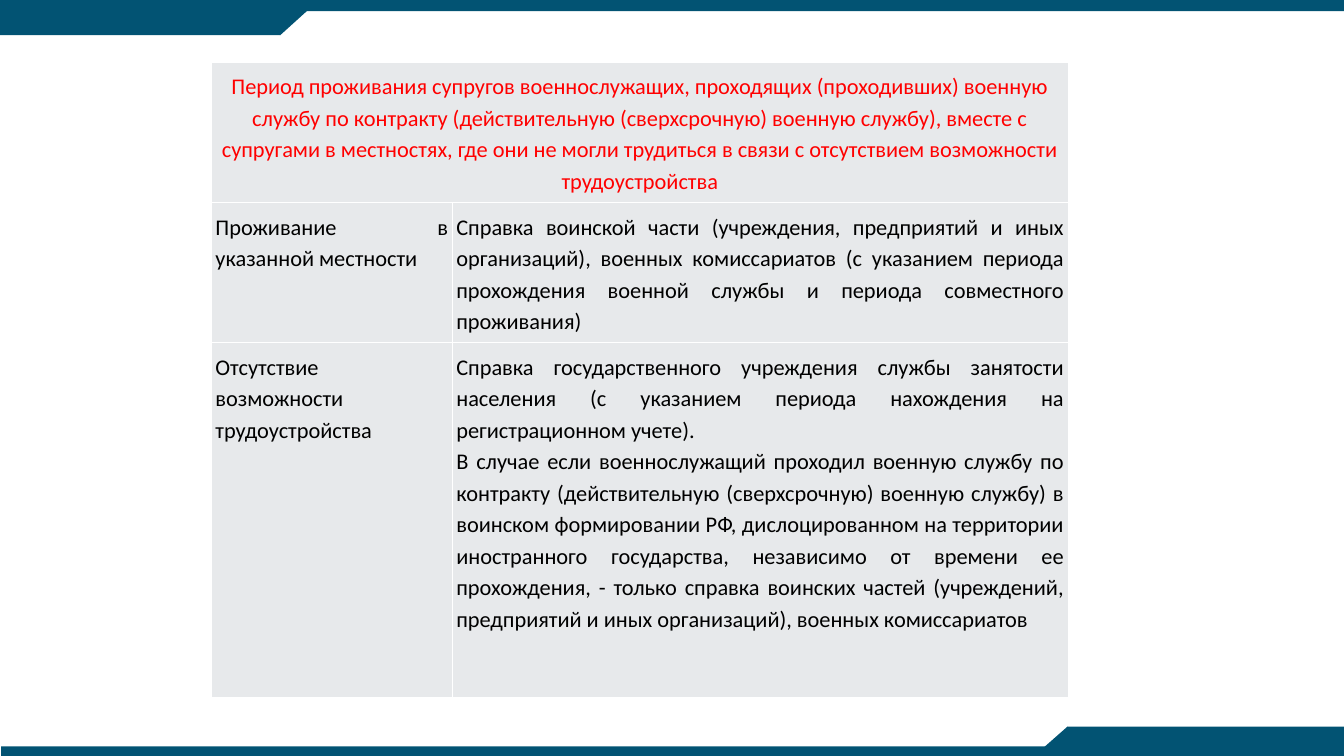
from typing import NamedTuple

from lxml.etree import SubElement
from pptx import Presentation
from pptx.dml.color import RGBColor
from pptx.enum.shapes import MSO_SHAPE
from pptx.enum.text import PP_ALIGN
from pptx.oxml.ns import qn
from pptx.util import Cm, Pt

TEAL = "025373"
PALE_GREY = "E7E9EB"
WHITE = "FFFFFF"
BLACK = "000000"
RED = "FF0000"

SLIDE_WIDTH, SLIDE_HEIGHT = 33.87, 19.05


class Band(NamedTuple):
    left: float
    top: float
    width: float
    height: float
    outline: MSO_SHAPE = MSO_SHAPE.RECTANGLE
    rotation: int = 0


class Entry(NamedTuple):
    row: int
    column: int
    paragraphs: list[str]
    color: str = BLACK
    alignment: PP_ALIGN = PP_ALIGN.JUSTIFY


BANDS = [
    Band(0, 0, SLIDE_WIDTH, 0.28),
    Band(0.03, 18.81, SLIDE_WIDTH - 0.03, 0.24),
    Band(0, 0.13, 7.06, 0.76),
    Band(6.22, 0.13, 1.68, 0.76, MSO_SHAPE.FLOWCHART_MERGE),
    Band(26.9, 18.31, SLIDE_WIDTH - 26.9, 0.74),
    Band(26.06, 18.31, 1.68, 0.74, MSO_SHAPE.FLOWCHART_MERGE, 180),
]

COLUMN_WIDTHS = [6.07, 15.52]
ROW_HEIGHTS = [3.48, 3.48, 8.94]

ENTRIES = [
    Entry(0, 0, [
        "Период проживания супругов военнослужащих, проходящих (проходивших) военную "
        "службу по контракту (действительную (сверхсрочную) военную службу), вместе с "
        "супругами в местностях, где они не могли трудиться в связи с отсутствием "
        "возможности трудоустройства",
    ], RED, PP_ALIGN.CENTER),
    Entry(1, 0, ["Проживание в указанной местности"]),
    Entry(1, 1, [
        "Справка воинской части (учреждения, предприятий и иных организаций), военных "
        "комиссариатов (с указанием периода прохождения военной службы и периода "
        "совместного проживания)",
    ]),
    Entry(2, 0, ["Отсутствие возможности трудоустройства"]),
    Entry(2, 1, [
        "Справка государственного учреждения службы занятости населения (с указанием "
        "периода нахождения на регистрационном учете).",
        "В случае если военнослужащий проходил военную службу по контракту "
        "(действительную (сверхсрочную) военную службу) в воинском формировании РФ, "
        "дислоцированном на территории иностранного государства, независимо от времени "
        "ее прохождения, - только справка воинских частей (учреждений, предприятий и "
        "иных организаций), военных комиссариатов",
    ]),
]


def rgb(color: str) -> RGBColor:
    return RGBColor.from_string(color)


def draw_band(slide, band: Band) -> None:
    shape = slide.shapes.add_shape(
        band.outline, Cm(band.left), Cm(band.top), Cm(band.width), Cm(band.height))
    shape.rotation = band.rotation
    shape.shadow.inherit = False
    shape.fill.solid()
    shape.fill.fore_color.rgb = rgb(TEAL)
    shape.line.fill.background()


def format_cell(cell) -> None:
    """Set margins, white borders and the pale fill."""
    cell.margin_left = cell.margin_right = Cm(0.1)
    cell.margin_top = cell.margin_bottom = Cm(0.18)
    properties = cell._tc.get_or_add_tcPr()
    for side in ("a:lnL", "a:lnR", "a:lnT", "a:lnB"):
        border = SubElement(properties, qn(side), w=str(Pt(1)))
        SubElement(SubElement(border, qn("a:solidFill")), qn("a:srgbClr"), val=WHITE)
    cell.fill.solid()
    cell.fill.fore_color.rgb = rgb(PALE_GREY)


def write_entry(table, entry: Entry) -> None:
    frame = table.cell(entry.row, entry.column).text_frame
    for index, text in enumerate(entry.paragraphs):
        paragraph = frame.add_paragraph() if index else frame.paragraphs[0]
        paragraph.alignment = entry.alignment
        paragraph.line_spacing = 1.15
        run = paragraph.add_run()
        run.text = text
        run.font.name = "Calibri"
        run.font.size = Pt(16)
        run.font.bold = False
        run.font.color.rgb = rgb(entry.color)


def draw_documents_table(slide) -> None:
    table = slide.shapes.add_table(
        len(ROW_HEIGHTS), len(COLUMN_WIDTHS), Cm(5.33), Cm(1.57),
        Cm(sum(COLUMN_WIDTHS)), Cm(sum(ROW_HEIGHTS))).table
    table.first_row = table.horz_banding = False
    for column, width in zip(table.columns, COLUMN_WIDTHS):
        column.width = Cm(width)
    for row, height in zip(table.rows, ROW_HEIGHTS):
        row.height = Cm(height)
    for cell in table.iter_cells():
        format_cell(cell)
    table.cell(0, 0).merge(table.cell(0, 1))
    for entry in ENTRIES:
        write_entry(table, entry)


def main() -> None:
    presentation = Presentation()
    presentation.slide_width = Cm(SLIDE_WIDTH)
    presentation.slide_height = Cm(SLIDE_HEIGHT)
    slide = presentation.slides.add_slide(presentation.slide_layouts.get_by_name("Blank"))
    for band in BANDS:
        draw_band(slide, band)
    draw_documents_table(slide)
    presentation.save("out.pptx")


if __name__ == "__main__":
    main()
